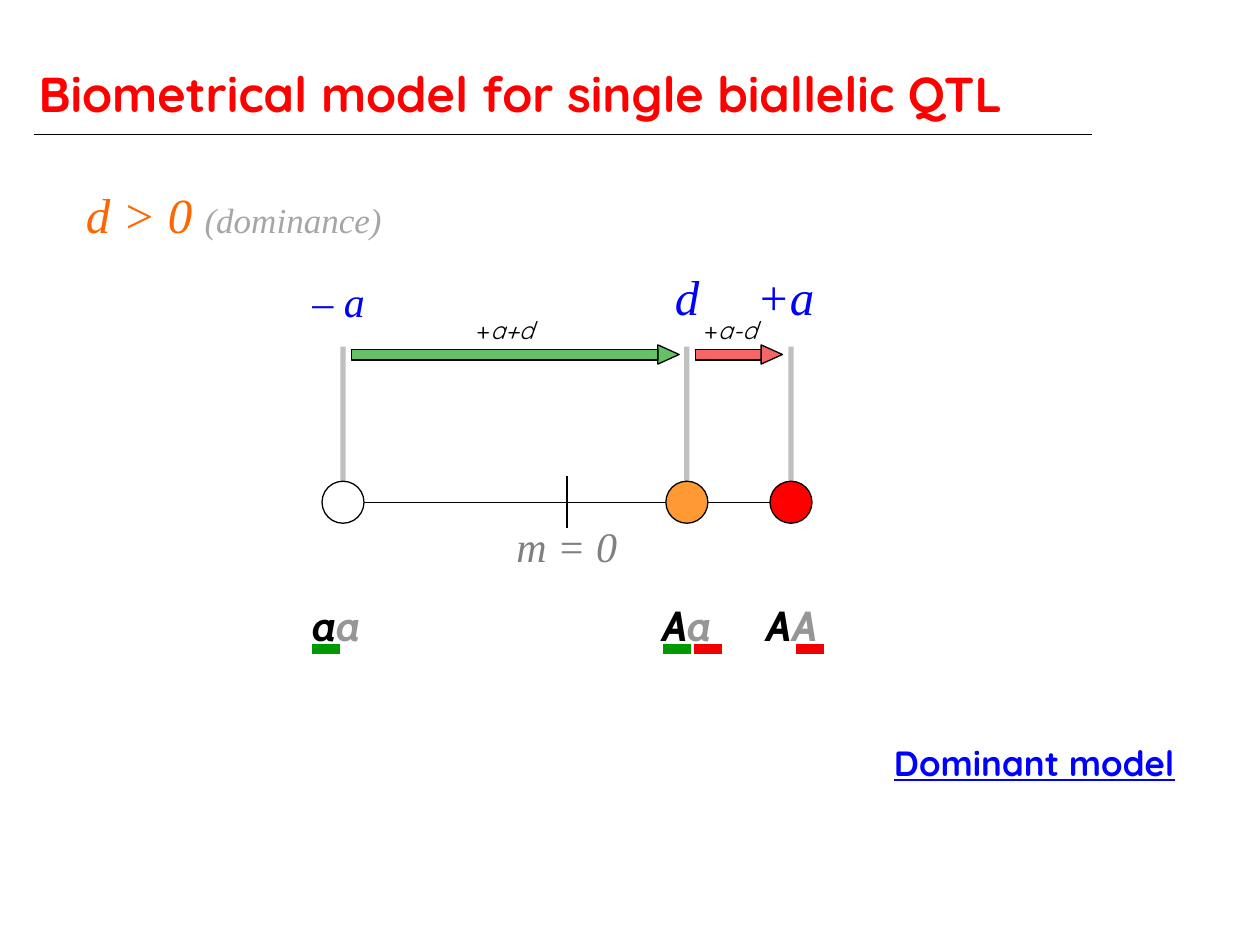
from lxml import etree
from pptx import Presentation
from pptx.dml.color import RGBColor
from pptx.enum.shapes import MSO_CONNECTOR, MSO_SHAPE
from pptx.enum.text import PP_ALIGN
from pptx.oxml.ns import qn
from pptx.util import Pt

LEFT, MID = PP_ALIGN.LEFT, PP_ALIGN.CENTER
LINE = MSO_CONNECTOR.STRAIGHT
RECT, OVAL, TIP = MSO_SHAPE.RECTANGLE, MSO_SHAPE.OVAL, MSO_SHAPE.ISOSCELES_TRIANGLE
SERIF, SANS, GENE = "Times New Roman", "Quicksand", "Cabin"
HEX = {
    "black": "000000", "white": "FFFFFF", "red": "FF0000", "blue": "0000FF",
    "flame": "FF6600", "amber": "FF9933", "green": "009900", "rose": "F00000",
    "gray": "808080", "ash": "969696", "pale": "A6A6A6",
}


def tint(fill, name, alpha=100):
    fill.solid()
    fill.fore_color.rgb = RGBColor.from_string(HEX[name])
    if alpha < 100:
        color = fill._xPr.find(qn("a:solidFill"))[0]
        etree.SubElement(color, qn("a:alpha")).set("val", str(alpha * 1000))


def text(slide, box, *runs, font=SERIF, size=28, color="blue", bold=False,
         slant=False, under=False, align=LEFT, wrap=True, space=1):
    frame = slide.shapes.add_textbox(*map(Pt, box)).text_frame
    frame.word_wrap = wrap
    para = frame.paragraphs[0]
    para.alignment = align
    para.line_spacing = space
    for words, diff in runs:
        run = para.add_run()
        run.text = words
        face = run.font
        face.name = font
        face.size = Pt(diff.get("size", size))
        face.bold = bold
        face.italic = diff.get("slant", slant)
        face.underline = under
        face.color.rgb = RGBColor.from_string(HEX[diff.get("color", color)])


def line(slide, x1, y1, x2, y2, color="black", width=0.75, alpha=100):
    link = slide.shapes.add_connector(LINE, *map(Pt, (x1, y1, x2, y2)))
    link.line.width = Pt(width)
    tint(link.line.fill, color, alpha)
    etree.SubElement(link._element.spPr, qn("a:effectLst"))


def shape(slide, kind, box, color, alpha=100, turn=0):
    item = slide.shapes.add_shape(kind, *map(Pt, box))
    item.shadow.inherit = False
    item.rotation = turn
    tint(item.fill, color, alpha)
    tint(item.line.fill, "black")
    item.line.width = Pt(0.75)


def head(slide, box):
    x, y, w, h = box
    text(slide, box, ("Biometrical model for single biallelic QTL", {}),
         font=SANS, color="red", bold=True, space=1.5)
    line(slide, x + 4.5, y + 61, x + 609, y + 61)


def case(slide, box):
    text(slide, box, ("d > 0 ", {}), ("(dominance)", {"size": 20, "color": "pale"}),
         color="flame", slant=True, wrap=False)


def arrow(slide, box, color, label, mid):
    x, y, w, h = box
    shape(slide, RECT, (x, y + 3.2, w - 12, 6), color, 60)
    shape(slide, TIP, (x + w - 11.5, y, 11, 12.2), color, 60, 90)
    text(slide, (mid - 28.5, y - 20, 57, 24), ("+", {}), (label, {"slant": True}),
         font=SANS, size=14, color="black", align=MID)


def scale(slide, box):
    x, y, w, h = box
    mean, axis = x + w / 2, y + 138
    low, high, het = mean - 128, mean + 128, mean + 68.5
    line(slide, low, axis, high, axis)
    line(slide, mean, axis - 15, mean, axis + 15)
    text(slide, (mean - 36, axis + 7, 72, 36), ("m = 0", {}),
         size=24, color="gray", slant=True, wrap=False)
    labels = [("– a", low - 24.6, 5, 50, 24), ("d", het - 14.4, 0, 29, 28),
              ("+a", high - 26.5, 0, 47.5, 28)]
    for words, left, drop, wide, size in labels:
        text(slide, (left, y + drop, wide, 41 - drop), (words, {}),
             size=size, slant=True, wrap=False, align=MID if words == "d" else LEFT)
    for mid, color in [(low, "white"), (het, "amber"), (high, "red")]:
        line(slide, mid, y + 49, mid, axis + 2, "ash", 3, 60)
        shape(slide, OVAL, (mid - 12, axis - 12, 24, 24), color)
    arrow(slide, (low + 5, y + 47.5, 187, 12), "green", "a+d ", low + 94.5)
    arrow(slide, (het + 5, y + 47.5, 49.5, 12), "rose", "a-d", het + 25)
    genes(slide, (low, axis + 52, high - low, 32), het)


def genes(slide, box, het):
    x, y, w, h = box
    pairs = [("a", "a", x - 3.5, 60), ("A", "a", het + 0.3, 73),
             ("A", "A", x + w + 0.8, 94)]
    for one, two, mid, wide in pairs:
        text(slide, (mid - wide / 2, y, wide, 25), (one, {}), (two, {"color": "ash"}),
             font=GENE, size=24, color="black", bold=True, slant=True, align=MID)
    marks = [(x - 17.5, "green"), (het - 13.7, "green"),
             (het + 4.3, "rose"), (x + w + 3, "rose")]
    for left, color in marks:
        line(slide, left, y + 31.8, left + 16, y + 31.8, color, 6)


def model(slide, box):
    text(slide, box, ("Dominant model", {}), font=SANS, size=20,
         bold=True, under=True, align=MID)


def main():
    deck = Presentation()
    deck.slide_width, deck.slide_height = Pt(720), Pt(540)
    slide = deck.slides.add_slide(deck.slide_layouts[6])
    head(slide, (15, 16, 615, 58))
    case(slide, (42, 102, 185, 41))
    scale(slide, (164, 149, 320, 226))
    model(slide, (498, 420, 186, 32))
    deck.save("out.pptx")


if __name__ == "__main__":
    main()
